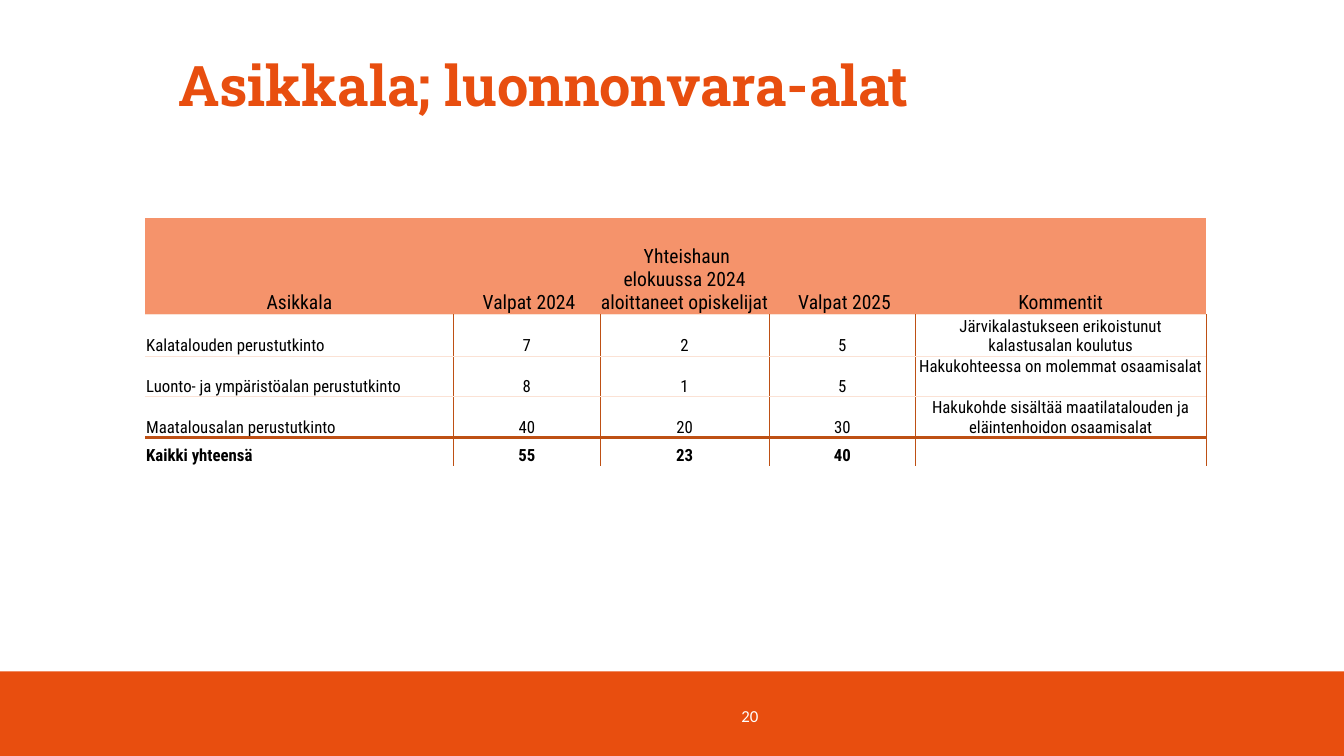
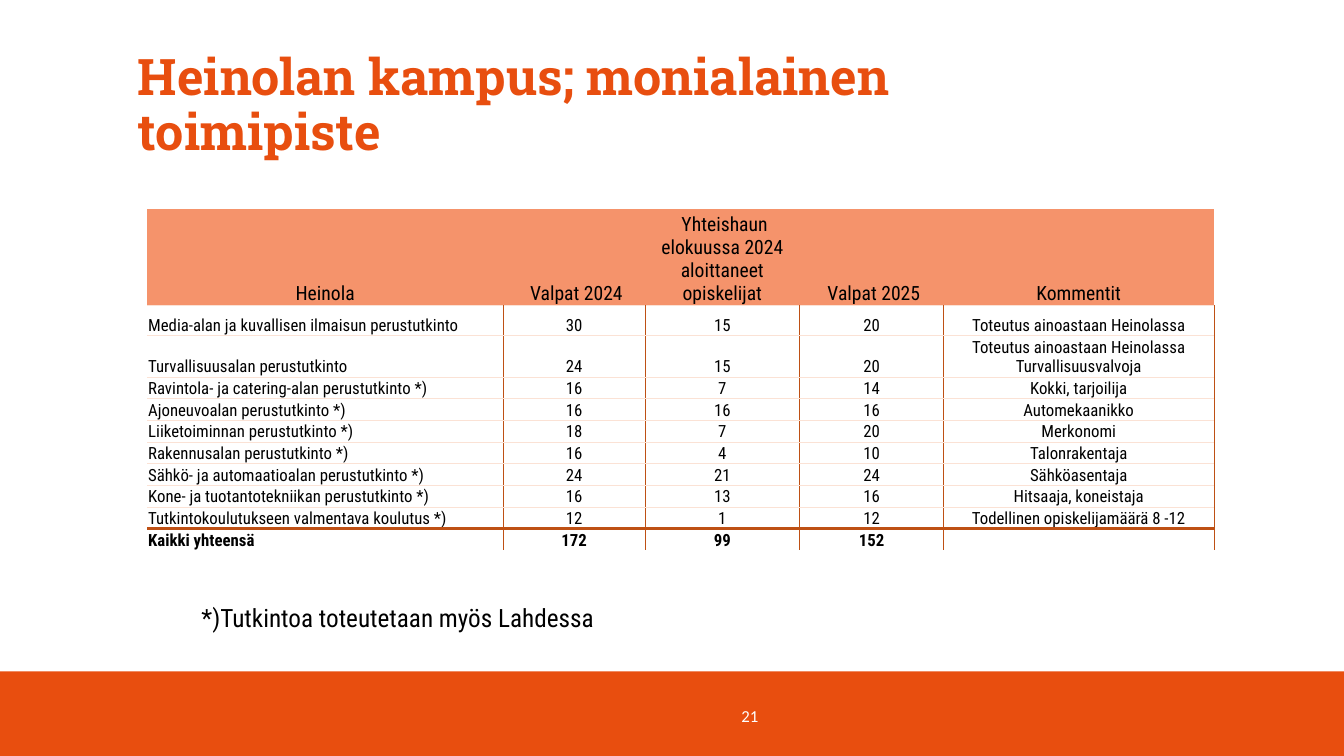
from lxml.etree import SubElement
from pptx import Presentation
from pptx.dml.color import RGBColor
from pptx.enum.shapes import MSO_SHAPE
from pptx.enum.text import MSO_ANCHOR, PP_ALIGN
from pptx.oxml.ns import qn
from pptx.util import Inches, Pt

ORANGE = "E84E0F"
HEADER = "F5936B"
RULE = "BE5014"
PALE = "FBE2D5"
BLACK = "000000"
WHITE = "FFFFFF"
TITLE_FONT = "Roboto Slab"
BODY_FONT = "Roboto Condensed"
NUMBER_FONT = "Calibri"

THIN_RULE = (RULE, 0.5)
THICK_RULE = (RULE, 2)
THIN_PALE = (PALE, 0.5)


def rgb(color):
    return RGBColor.from_string(color)


def write(frame, text, size=12, font=BODY_FONT, color=BLACK, bold=False,
          align=PP_ALIGN.LEFT, spacing=None):
    """Fill a text frame with one paragraph for each line of text."""
    frame.word_wrap = True
    for index, line in enumerate(text.split("\n")):
        para = frame.paragraphs[0] if index == 0 else frame.add_paragraph()
        para.alignment = align
        if spacing:
            para.line_spacing = spacing
        if not line:
            SubElement(para._p, qn("a:endParaRPr"), sz=str(size * 100))
            continue
        span = para.add_run()
        span.text = line
        span.font.size = Pt(size)
        span.font.name = font
        span.font.bold = bold
        span.font.color.rgb = rgb(color)


def set_borders(cell, **edges):
    """Draw the edges L, R, T, B given as (color, points); hide the others."""
    properties = cell._tc.get_or_add_tcPr()
    for side in "LRTB":
        color, width = edges.get(side) or (None, 0)
        line = SubElement(properties, qn(f"a:ln{side}"), w=str(Pt(width)))
        if color:
            fill = SubElement(line, qn("a:solidFill"))
            SubElement(fill, qn("a:srgbClr"), val=color)
        else:
            SubElement(line, qn("a:noFill"))


class Deck:
    """The presentation, its shared style and the current page."""

    def __init__(self):
        self.file = Presentation()
        self.file.slide_width = Inches(13.33)
        self.file.slide_height = Inches(7.5)
        self.page = None

    def add_page(self, number):
        self.page = self.file.slides.add_slide(self.file.slide_layouts[6])
        band = self.page.shapes.add_shape(
            MSO_SHAPE.RECTANGLE, 0, Inches(6.66), Inches(13.33), Inches(0.84))
        band.shadow.inherit = False
        band.fill.solid()
        band.fill.fore_color.rgb = rgb(ORANGE)
        band.line.fill.background()
        self.text(str(number), 4.62, 6.9, 3, 0.4, anchor=MSO_ANCHOR.MIDDLE,
                  font=NUMBER_FONT, color=WHITE, align=PP_ALIGN.RIGHT)

    def text(self, text, left, top, width, height, anchor=MSO_ANCHOR.TOP, **style):
        box = self.page.shapes.add_textbox(
            Inches(left), Inches(top), Inches(width), Inches(height))
        box.text_frame.vertical_anchor = anchor
        write(box.text_frame, text, **style)

    def title(self, text, left, top, height, size):
        self.text(text, left, top, 10, height, anchor=MSO_ANCHOR.BOTTOM, size=size,
                  font=TITLE_FONT, color=ORANGE, bold=True, spacing=0.9)

    def table(self, rows, left, top, widths, heights):
        """Add a table with a filled header row and a bold total row."""
        frame = self.page.shapes.add_table(
            len(rows), len(widths), Inches(left), Inches(top),
            Inches(sum(widths)), Inches(sum(heights)))
        table = frame.table
        table.first_row = table.horz_banding = False
        for column, width in zip(table.columns, widths):
            column.width = Inches(width)
        for row, height in zip(table.rows, heights):
            row.height = Inches(height)
        for row_index, values in enumerate(rows):
            for column_index, value in enumerate(values):
                self.table_cell(table.cell(row_index, column_index), str(value),
                                row_index, column_index, len(rows) - 1)
        return table

    def table_cell(self, cell, text, row, column, total_row):
        is_header, is_total = row == 0, row == total_row
        cell.margin_left = cell.margin_right = cell.margin_top = Inches(0.01)
        cell.margin_bottom = 0
        cell.vertical_anchor = MSO_ANCHOR.BOTTOM
        if is_header:
            set_borders(cell, B=THIN_PALE)
            cell.fill.solid()
            cell.fill.fore_color.rgb = rgb(HEADER)
        else:
            below = THICK_RULE if row == total_row - 1 else THIN_PALE
            set_borders(cell, L=THIN_RULE if column else None, R=THIN_RULE,
                        T=THICK_RULE if is_total else THIN_PALE,
                        B=None if is_total else below)
            cell.fill.background()
        centred = is_header or column > 0
        write(cell.text_frame, text, size=14 if is_header else 12, bold=is_total,
              align=PP_ALIGN.CENTER if centred else PP_ALIGN.LEFT)


def header(place):
    return (place, " Valpat 2024",
            " Yhteishaun elokuussa 2024 aloittaneet opiskelijat",
            " Valpat 2025", "Kommentit")


def add_asikkala(deck):
    deck.add_page(20)
    deck.title("Asikkala; luonnonvara-alat", 1.67, 0.47, 0.76, 40)
    rows = [
        header("Asikkala"),
        ("Kalatalouden perustutkinto", 7, 2, 5,
         "Järvikalastukseen erikoistunut kalastusalan koulutus"),
        ("Luonto- ja ympäristöalan perustutkinto", 8, 1, 5,
         "Hakukohteessa on molemmat osaamisalat"),
        ("Maatalousalan perustutkinto", 40, 20, 30,
         "Hakukohde sisältää maatilatalouden ja eläintenhoidon osaamisalat"),
        ("Kaikki yhteensä", 55, 23, 40, ""),
    ]
    table = deck.table(rows, 1.44, 2.16, [3.06, 1.45, 1.68, 1.45, 2.88],
                       [0.96, 0.4, 0.4, 0.4, 0.28])
    table.cell(2, 4).vertical_anchor = MSO_ANCHOR.TOP


def add_heinola(deck):
    deck.add_page(21)
    deck.title("Heinolan kampus; monialainen toimipiste", 1.27, 0.35, 1.3, 36)
    rows = [
        header("Heinola"),
        ("Media-alan ja kuvallisen ilmaisun perustutkinto", 30, 15, 20,
         "Toteutus ainoastaan Heinolassa"),
        ("Turvallisuusalan perustutkinto", 24, 15, 20,
         "Toteutus ainoastaan Heinolassa\nTurvallisuusvalvoja"),
        ("Ravintola- ja catering-alan perustutkinto *)", 16, 7, 14,
         "Kokki, tarjoilija"),
        ("Ajoneuvoalan perustutkinto *)", 16, 16, 16, "Automekaanikko"),
        ("Liiketoiminnan perustutkinto *)", 18, 7, 20, "Merkonomi"),
        ("Rakennusalan perustutkinto *)", 16, 4, 10, "Talonrakentaja"),
        ("Sähkö- ja automaatioalan perustutkinto *)", 24, 21, 24, "Sähköasentaja"),
        ("Kone- ja tuotantotekniikan perustutkinto *)", 16, 13, 16,
         "Hitsaaja, koneistaja"),
        ("Tutkintokoulutukseen valmentava koulutus *)", 12, 1, 12,
         "Todellinen opiskelijamäärä 8 -12"),
        ("Kaikki yhteensä", 172, 99, 152, ""),
    ]
    tall_rows = [0.96, 0.3, 0.41]
    low_count = len(rows) - len(tall_rows)
    deck.table(rows, 1.46, 2.07, [3.53, 1.41, 1.53, 1.43, 2.68],
               tall_rows + [1.72 / low_count] * low_count)
    deck.text("*)Tutkintoa toteutetaan myös Lahdessa", 1.27, 5.93, 5.35, 0.4,
              size=18, align=PP_ALIGN.CENTER)


def main():
    deck = Deck()
    add_asikkala(deck)
    add_heinola(deck)
    deck.file.save("out.pptx")


if __name__ == "__main__":
    main()
